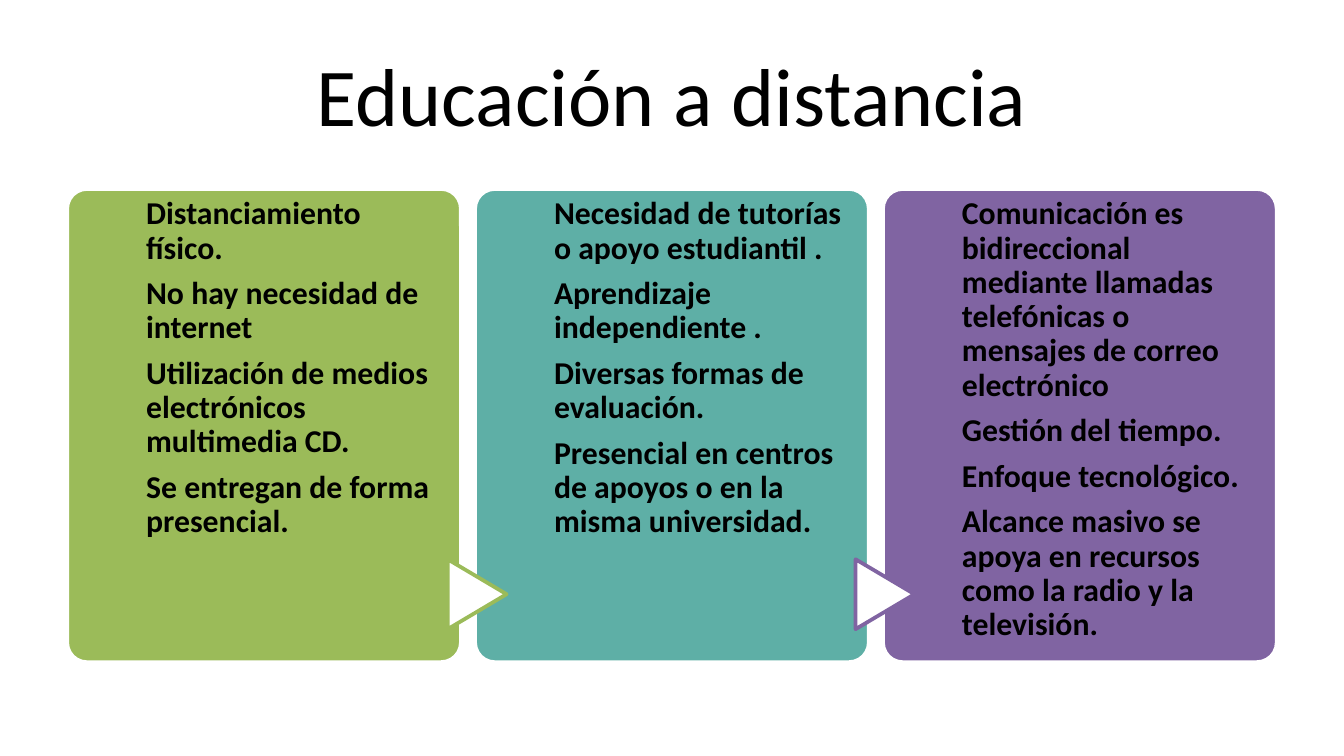
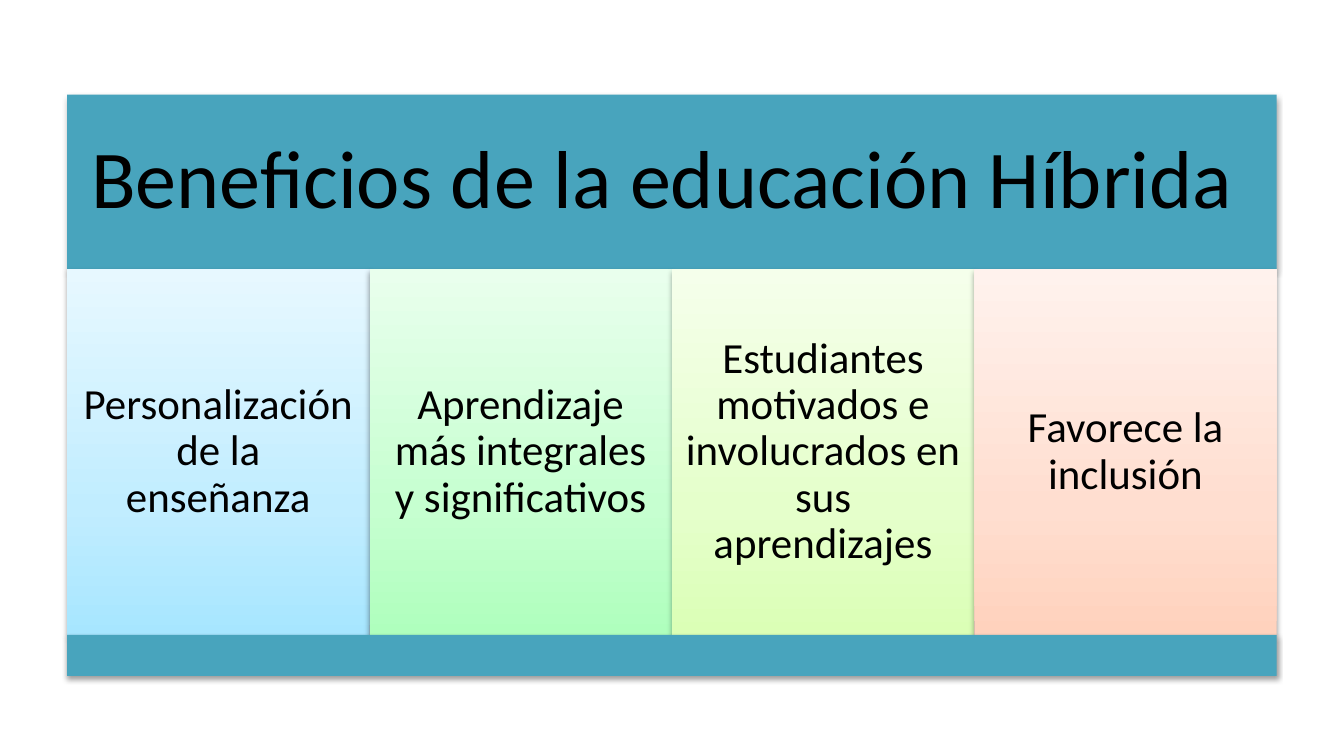
"""Builds two slides on distance learning and the benefits of hybrid learning."""
from copy import deepcopy

from lxml import etree
from pptx import Presentation
from pptx.dml.color import RGBColor
from pptx.enum.shapes import MSO_SHAPE
from pptx.enum.text import MSO_ANCHOR, MSO_AUTO_SIZE, PP_ALIGN
from pptx.oxml.ns import qn
from pptx.util import Inches, Pt

ROUND, RECT, ARROW = (MSO_SHAPE.ROUNDED_RECTANGLE, MSO_SHAPE.RECTANGLE,
                      MSO_SHAPE.FLOWCHART_EXTRACT)
TOP, MIDDLE = MSO_ANCHOR.TOP, MSO_ANCHOR.MIDDLE
LEFT, CENTER = PP_ALIGN.LEFT, PP_ALIGN.CENTER
FIXED = MSO_AUTO_SIZE.NONE
FONT, BLACK, WHITE, BLUE = "Calibri", "000000", "FFFFFF", "48A4BD"
rgb = RGBColor.from_string

deck = Presentation()
deck.slide_width = Inches(10)
deck.slide_height = deck.slide_width * 9 // 16
COL, ROW = deck.slide_width / 100, deck.slide_height / 100
SIDE, SPAN = 5, 90


def place(shape, left, top, width, height, fill=None, edge=None, shade=False):
    """Set place in percent of the slide, fill, outline and shadow."""
    shape.left, shape.width = round(left * COL), round(width * COL)
    shape.top, shape.height = round(top * ROW), round(height * ROW)
    shape.shadow.inherit = False
    if fill:
        shape.fill.solid()
        shape.fill.fore_color.rgb = rgb(fill)
    if edge:
        shape.line.color.rgb = rgb(edge)
        shape.line.width = Pt(2)
    else:
        shape.line.fill.background()
    if shade:
        glow = etree.SubElement(
            shape.element.spPr.find(qn("a:effectLst")), qn("a:outerShdw"),
            blurRad=str(Pt(3.1)), dist=str(Pt(1.6)), dir="5400000", rotWithShape="0")
        tone = etree.SubElement(glow, qn("a:srgbClr"), val=BLACK)
        etree.SubElement(tone, qn("a:alpha"), val="38000")
    return shape


def write(shape, text, size, align, anchor, pads, bold=False, tight=True):
    """Fill a shape with paragraphs, one to a line of text."""
    frame = shape.text_frame
    frame.text = text
    frame.word_wrap, frame.auto_size = True, FIXED
    frame.vertical_anchor = anchor
    (frame.margin_left, frame.margin_top,
     frame.margin_right, frame.margin_bottom) = [round(pad * COL) for pad in pads]
    for para in frame.paragraphs:
        para.alignment = align
        if tight:
            para.line_spacing, para.space_after = 0.9, Pt(round(size * 0.35))
        for run in para.runs:
            run.font.name, run.font.size, run.font.bold = FONT, Pt(size), bold
            run.font.color.rgb = rgb(BLACK)


slide = deck.slides.add_slide(deck.slide_layouts[5])
title = place(slide.shapes.title, SIDE, 4, SPAN, 16.7)
write(title, "Educación a distancia", 44, CENTER, MIDDLE, (1, 0.5, 1, 0.5), tight=False)

cards = [
    ("9BBB59", "Distanciamiento físico.\nNo hay necesidad de internet\n"
     "Utilización de medios electrónicos multimedia CD.\n"
     "Se entregan de forma presencial."),
    ("5EAFA6", "Necesidad de tutorías o apoyo estudiantil .\n"
     "Aprendizaje independiente .\nDiversas formas de evaluación.\n"
     "Presencial en centros de apoyos o en la misma universidad."),
    ("8064A2", "Comunicación es bidireccional mediante llamadas telefónicas "
     "o mensajes de correo electrónico\nGestión del tiempo.\n"
     "Enfoque tecnológico.\n"
     "Alcance masivo se apoya en recursos como la radio y la televisión."),
]
edges = [None, "9BBB59", "8064A2"]
GAP = 1.05
WIDE = (SPAN - GAP * (len(cards) - 1)) / len(cards)
for i, ((hue, text), edge) in enumerate(zip(cards, edges)):
    left = SIDE + i * (WIDE + GAP)
    card = place(slide.shapes.add_shape(ROUND, 0, 0, 0, 0),
                 left, 25, WIDE, 62.6, hue, WHITE)
    card.adjustments[0] = 0.05
    write(card, text, 17, LEFT, TOP, (5.45, 0.2, 1.2, 0), bold=True)
    if edge:
        arrow = place(slide.shapes.add_shape(ARROW, 0, 0, 0, 0),
                      left - 2.45, 74.7, 5.2, 7.8, WHITE, edge)
        arrow.rotation = 90

slide = deck.slides.add_slide(deck.slide_layouts[5])
HEAD, BODY, FOOT = 12.5, 35.6, 84
title = place(slide.shapes.title, SIDE, HEAD, SPAN, BODY - HEAD, BLUE, shade=True)
write(title, "Beneficios de la educación Híbrida ", 44, CENTER, MIDDLE, [1.8] * 4)

gains = [
    ("Personalización de la enseñanza", ("A7E6FF", "C1EDFF", "E7F8FF")),
    ("Aprendizaje más integrales y significativos", ("AFFFBD", "C6FFD0", "E9FFED")),
    ("Estudiantes motivados e involucrados en sus aprendizajes",
     ("DBFFB6", "E5FFCB", "F5FFEB")),
    ("Favorece la inclusión", ("FFD2BD", "FFDED0", "FFF2ED")),
]
WIDE = SPAN / len(gains)
for i, (text, hues) in enumerate(gains):
    cell = place(slide.shapes.add_shape(RECT, 0, 0, 0, 0),
                 SIDE + i * WIDE, BODY, WIDE, FOOT - BODY, shade=True)
    cell.fill.gradient()
    cell.fill.gradient_angle = 90
    first = cell.element.spPr.find(".//" + qn("a:gs"))
    first.addnext(deepcopy(first))
    for stop, spot, hue in zip(cell.fill.gradient_stops, (0, 0.35, 1), hues):
        stop.position, stop.color.rgb = spot, rgb(hue)
    write(cell, text, 23, CENTER, MIDDLE, [1] * 4)
place(slide.shapes.add_shape(RECT, 0, 0, 0, 0), SIDE, FOOT, SPAN, 5.4, BLUE, shade=True)

deck.save("out.pptx")
